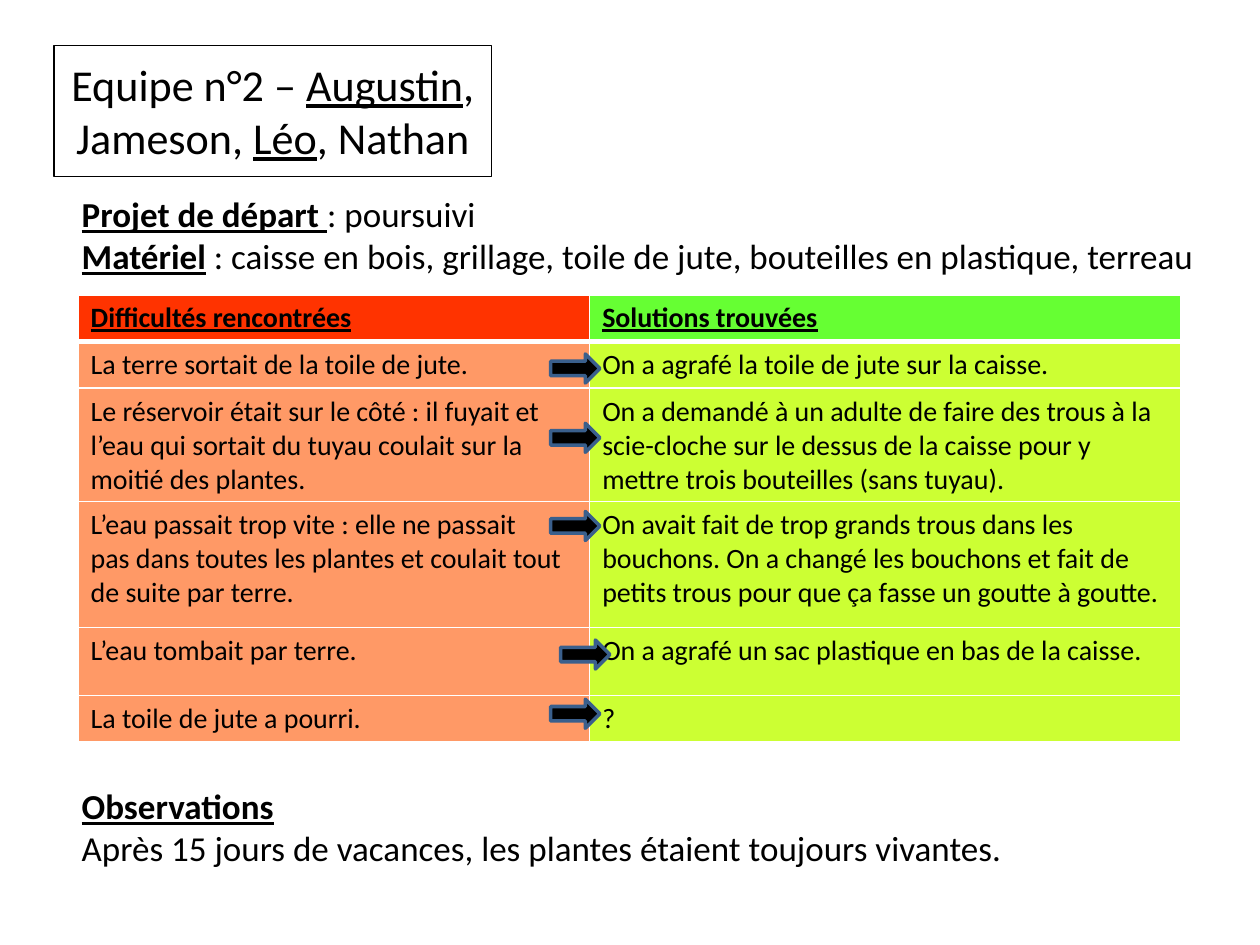
from lxml.etree import SubElement
from pptx import Presentation
from pptx.dml.color import RGBColor
from pptx.enum.shapes import MSO_SHAPE as Shape
from pptx.enum.text import MSO_ANCHOR as Anchor, PP_ALIGN as Align
from pptx.oxml.ns import qn
from pptx.util import Inches, Pt

BLACK = RGBColor(0, 0, 0)
WHITE = RGBColor(255, 255, 255)
RED = RGBColor(0xFF, 0x33, 0x00)
GREEN = RGBColor(0x66, 0xFF, 0x33)
ORANGE = RGBColor(0xFF, 0x99, 0x66)
LIME = RGBColor(0xCC, 0xFF, 0x33)
BLUE = RGBColor(0x3A, 0x5F, 0x8C)

PLAIN = {}
UNDERLINED = {"underline": True}
HEADING = {"bold": True, "underline": True}

TITLE = [[("Equipe n°2 – ", PLAIN), ("Augustin", UNDERLINED), (", Jameson, ", PLAIN),
          ("Léo", UNDERLINED), (", Nathan", PLAIN)]]
PROJECT = [
    [("Projet de départ ", HEADING), (": poursuivi", PLAIN)],
    [("Matériel", HEADING),
     (" : caisse en bois, grillage, toile de jute, bouteilles en plastique, terreau", PLAIN)],
]
OBSERVATIONS = [
    [("Observations", HEADING)],
    [("Après 15 jours de vacances, les plantes étaient toujours vivantes.", PLAIN)],
]
ROWS = [
    ("Difficultés rencontrées", "Solutions trouvées"),
    ("La terre sortait de la toile de jute.", "On a agrafé la toile de jute sur la caisse."),
    ("Le réservoir était sur le côté : il fuyait et l’eau qui sortait du tuyau coulait "
     "sur la moitié des plantes.",
     "On a demandé à un adulte de faire des trous à la scie-cloche sur le dessus de la "
     "caisse pour y mettre trois bouteilles (sans tuyau)."),
    ("L’eau passait trop vite : elle ne passait\n"
     "pas dans toutes les plantes et coulait tout de suite par terre.",
     "On avait fait de trop grands trous dans les bouchons. On a changé les bouchons et "
     "fait de petits trous pour que ça fasse un goutte à goutte."),
    ("L’eau tombait par terre.", "On a agrafé un sac plastique en bas de la caisse."),
    ("La toile de jute a pourri.", "?"),
]
COLUMN_WIDTHS = (4.06, 4.69)
ROW_HEIGHTS = (0.37, 0.37, 0.9, 1, 0.54, 0.37)
TABLE_LEFT, TABLE_TOP = 0.62, 2.34
ARROW_SIZE = (0.39, 0.23)
ARROWS = [(4.37, 2.81), (4.37, 3.36), (4.37, 4.06), (4.45, 5.08), (4.37, 5.55)]


def write(frame, paragraphs, size, align=Align.LEFT):
    frame.word_wrap = True
    for index, spans in enumerate(paragraphs):
        para = frame.add_paragraph() if index else frame.paragraphs[0]
        para.alignment = align
        for text, look in spans:
            span = para.add_run()
            span.text = text
            span.font.color.rgb = BLACK
            values = {"name": "Calibri", "size": Pt(size), "bold": False, "underline": False}
            for name, value in {**values, **look}.items():
                setattr(span.font, name, value)


def add_text(slide, place, paragraphs, size, align=Align.LEFT):
    box = slide.shapes.add_textbox(*map(Inches, place))
    write(box.text_frame, paragraphs, size, align)
    return box


def add_borders(cell, bottom):
    properties = cell._tc.get_or_add_tcPr()
    widths = {"a:lnL": 1, "a:lnR": 1, "a:lnT": 1, "a:lnB": bottom}
    for position, (tag, width) in enumerate(widths.items()):
        line = SubElement(properties, qn(tag), w=str(Pt(width)))
        fill = SubElement(line, qn("a:solidFill"))
        SubElement(fill, qn("a:srgbClr"), val=str(WHITE))
        properties.insert(position, line)


def add_table(slide):
    place = (TABLE_LEFT, TABLE_TOP, sum(COLUMN_WIDTHS), sum(ROW_HEIGHTS))
    table = slide.shapes.add_table(len(ROWS), len(COLUMN_WIDTHS), *map(Inches, place)).table
    for column, width in zip(table.columns, COLUMN_WIDTHS):
        column.width = Inches(width)
    for number, (row, height, texts) in enumerate(zip(table.rows, ROW_HEIGHTS, ROWS)):
        row.height = Inches(height)
        header = number == 0
        fills = (RED, GREEN) if header else (ORANGE, LIME)
        for cell, text, color in zip(row.cells, texts, fills):
            cell.fill.solid()
            cell.fill.fore_color.rgb = color
            look = HEADING if header else PLAIN
            write(cell.text_frame, [[(part, look)] for part in text.split("\n")], 16)
            add_borders(cell, 3 if header else 1)


def add_arrow(slide, place):
    arrow = slide.shapes.add_shape(Shape.RIGHT_ARROW, *map(Inches, place + ARROW_SIZE))
    arrow.shadow.inherit = False
    arrow.fill.solid()
    arrow.fill.fore_color.rgb = BLACK
    arrow.line.color.rgb = BLUE
    arrow.line.width = Pt(2)


def main():
    deck = Presentation()
    deck.slide_width, deck.slide_height = Inches(10), Inches(7.5)
    slide = deck.slides.add_slide(deck.slide_layouts[6])
    title = add_text(slide, (0.43, 0.36, 3.47, 1.04), TITLE, 25.2, Align.CENTER)
    title.text_frame.vertical_anchor = Anchor.MIDDLE
    title.line.color.rgb = BLACK
    title.line.width = Pt(0.75)
    add_text(slide, (0.55, 1.48, 9.14, 0.77), PROJECT, 20)
    add_text(slide, (0.55, 6.18, 9.14, 0.77), OBSERVATIONS, 20)
    add_table(slide)
    for place in ARROWS:
        add_arrow(slide, place)
    deck.save("out.pptx")


if __name__ == "__main__":
    main()
